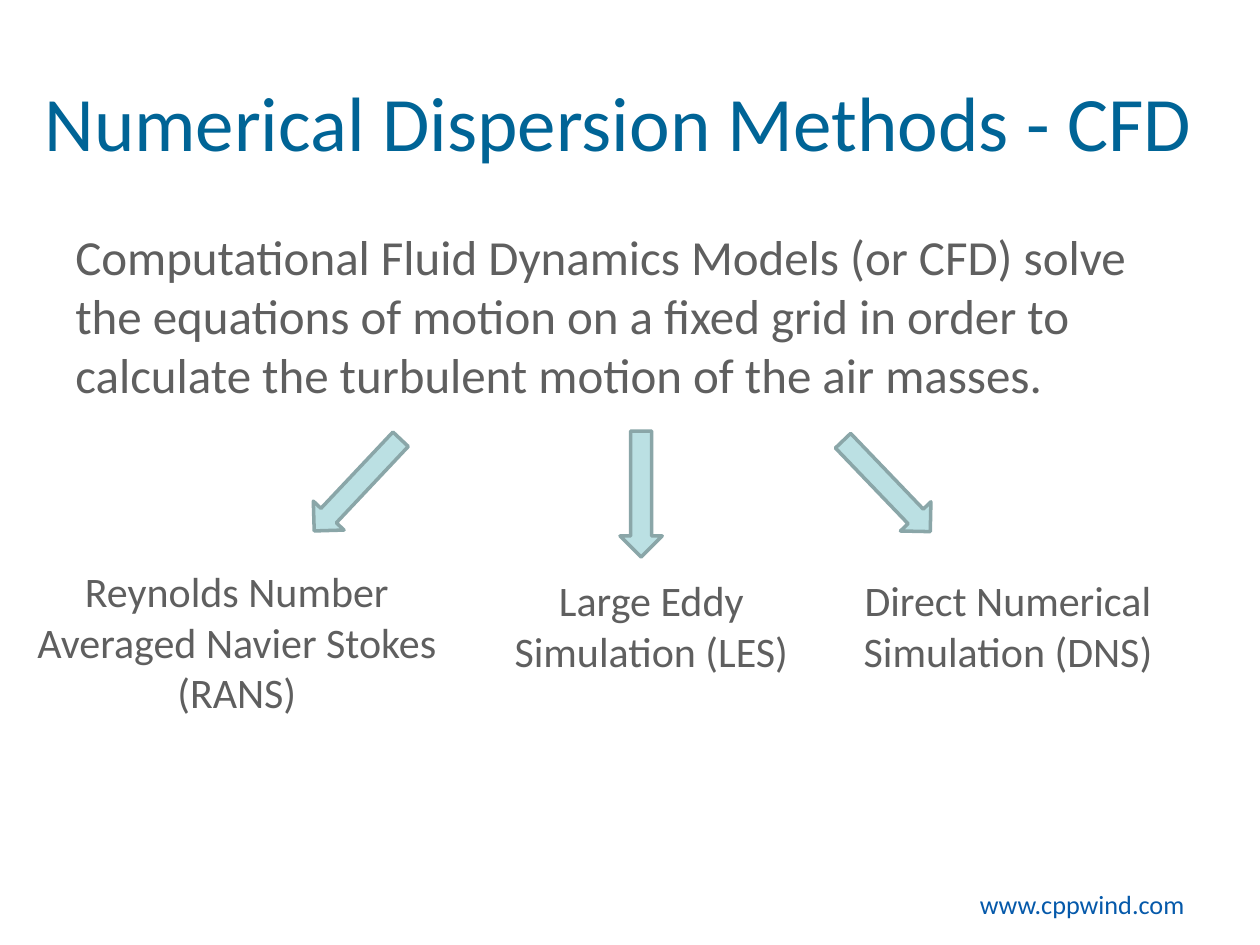
from lxml import etree
from pptx import Presentation
from pptx.dml.color import RGBColor
from pptx.enum.shapes import MSO_SHAPE
from pptx.enum.text import MSO_ANCHOR, MSO_AUTO_SIZE, PP_ALIGN
from pptx.oxml.ns import qn
from pptx.util import Cm, Pt

LEFT, CENTER, RIGHT = PP_ALIGN.LEFT, PP_ALIGN.CENTER, PP_ALIGN.RIGHT
TOP, MIDDLE = MSO_ANCHOR.TOP, MSO_ANCHOR.MIDDLE
NO_AUTOFIT = MSO_AUTO_SIZE.NONE
DOWN_ARROW = MSO_SHAPE.DOWN_ARROW

TITLE_BLUE = RGBColor(0x00, 0x64, 0x96)
LINK_BLUE = RGBColor(0x05, 0x59, 0xAA)
TEXT_GRAY = RGBColor(0x5F, 0x5F, 0x5F)
ARROW_FILL = RGBColor(0xBB, 0xE0, 0xE3)
ARROW_LINE = RGBColor(0x8A, 0xA6, 0xA8)


class SlideBuilder:
    font_name = "Calibri"
    arrow_width, arrow_height = Cm(0.85), Cm(2.54)

    def __init__(self, presentation):
        self.slide = presentation.slides.add_slide(presentation.slide_layouts[5])

    def fill_text(self, shape, text, size, color, alignment, anchor=TOP):
        frame = shape.text_frame
        frame_format = {"word_wrap": True, "auto_size": NO_AUTOFIT, "vertical_anchor": anchor}
        for name, value in frame_format.items():
            setattr(frame, name, value)
        paragraph = frame.paragraphs[0]
        paragraph.alignment = alignment
        run = paragraph.add_run()
        run.text = text
        for name, value in {"name": self.font_name, "size": Pt(size)}.items():
            setattr(run.font, name, value)
        run.font.color.rgb = color
        return run

    def title(self, text, left, top, width, height):
        shape = self.slide.shapes.title
        place = {"left": left, "top": top, "width": width, "height": height}
        for name, value in place.items():
            setattr(shape, name, Cm(value))
        run = self.fill_text(shape, text, 44, TITLE_BLUE, LEFT, MIDDLE)
        self.add_text_shadow(run)

    def add_text_shadow(self, run):
        fill = run._r.find(qn("a:rPr")).find(qn("a:solidFill"))
        effects = etree.Element(qn("a:effectLst"))
        shadow = etree.SubElement(
            effects, qn("a:outerShdw"), dist="25400", dir="2700000", algn="tl")
        etree.SubElement(shadow, qn("a:srgbClr"), val="000000")
        fill.addnext(effects)

    def text(self, text, left, top, width, height, size, color=TEXT_GRAY, alignment=LEFT):
        box = self.slide.shapes.add_textbox(Cm(left), Cm(top), Cm(width), Cm(height))
        self.fill_text(box, text, size, color, alignment)

    def arrow(self, left, top, rotation):
        shape = self.slide.shapes.add_shape(
            DOWN_ARROW, Cm(left), Cm(top), self.arrow_width, self.arrow_height)
        shape.rotation = rotation
        shape.shadow.inherit = False
        shape.fill.solid()
        shape.fill.fore_color.rgb = ARROW_FILL
        shape.line.color.rgb = ARROW_LINE
        shape.line.width = Pt(2)


def main():
    presentation = Presentation()
    presentation.slide_width, presentation.slide_height = Cm(25.4), Cm(19.05)
    builder = SlideBuilder(presentation)

    builder.title("Numerical Dispersion Methods - CFD", 0.64, 0.85, 24.13, 3.18)
    builder.text(
        "Computational Fluid Dynamics Models (or CFD) solve the equations of motion "
        "on a fixed grid in order to calculate the turbulent motion of the air masses.",
        1.27, 4.45, 22.86, 4.2, 28)

    methods = [
        ("Reynolds Number Averaged Navier Stokes (RANS)", 0.43, 11.28, 8.69, 3.33),
        ("Large Eddy Simulation (LES)", 9.32, 11.46, 7.62, 2.31),
        ("Direct Numerical Simulation (DNS)", 16.51, 11.46, 7.62, 2.31),
    ]
    for label, *place in methods:
        builder.text(label, *place, size=24, alignment=CENTER)

    arrows = [(12.5, 8.69, 0), (17.45, 8.53, 316.2), (6.78, 8.51, 43.3)]
    for left, top, rotation in arrows:
        builder.arrow(left, top, rotation)

    builder.text("www.cppwind.com", 15.24, 17.78, 8.89, 0.89, 15, LINK_BLUE, RIGHT)
    presentation.save("out.pptx")


if __name__ == "__main__":
    main()
